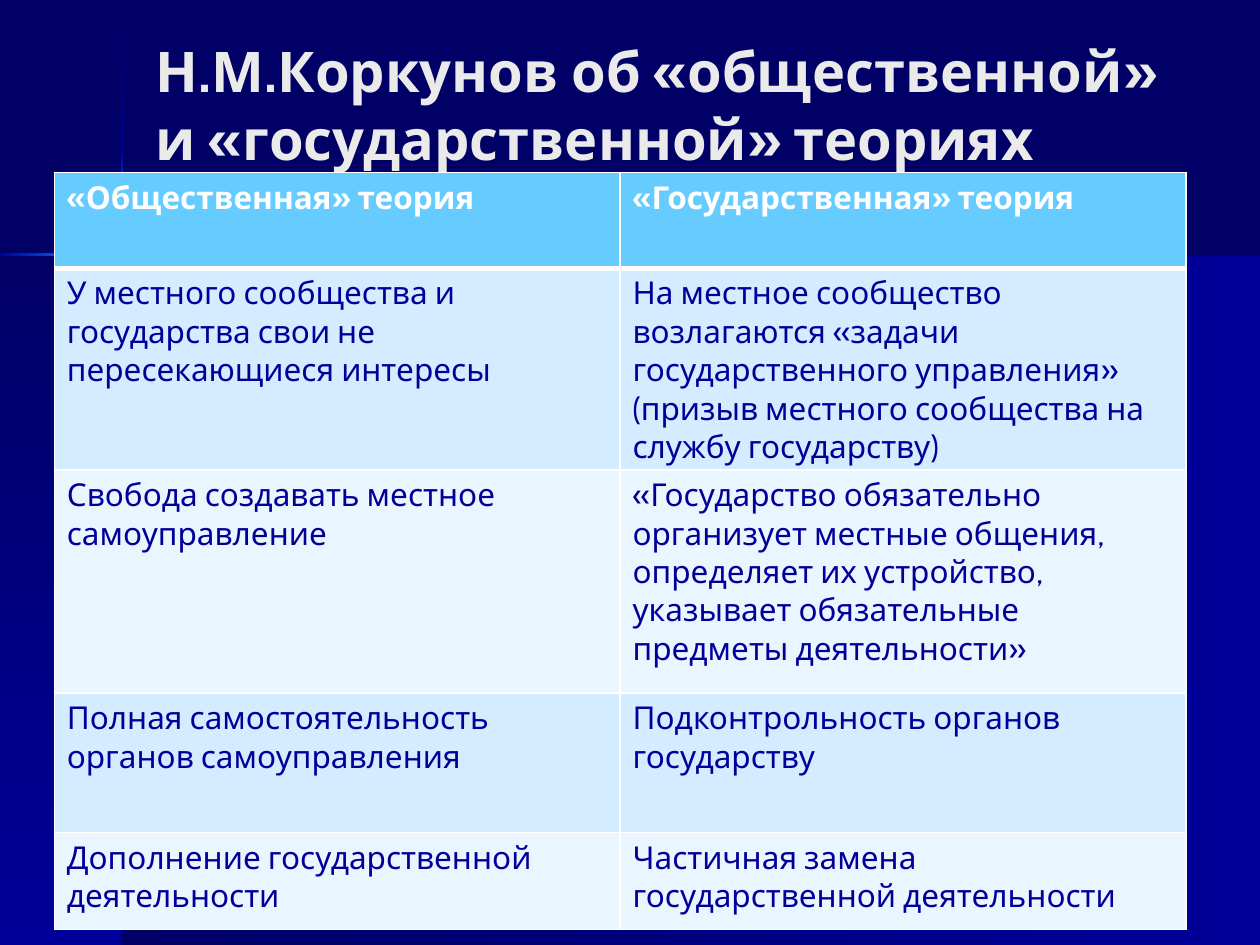
from dataclasses import dataclass
from itertools import pairwise

from lxml import etree
from pptx import Presentation
from pptx.dml.color import RGBColor
from pptx.enum import shapes, text
from pptx.oxml import ns
from pptx.util import Pt


@dataclass(frozen=True)
class Theme:
    font: str = "Cabin"
    title_size: int = 32
    cell_size: int = 18
    navy: str = "000066"
    blue: str = "000099"
    bright: str = "0066FF"
    glow: str = "FFFFCC"
    title: str = "EAEAEA"
    white: str = "FFFFFF"
    header: str = "66CCFF"
    bands: tuple = ("D3ECFF", "EAF6FF")


T = Theme()
RISE = (T.navy, T.blue)
FALL = (T.blue, T.navy)
BRIGHTEN = (T.blue, T.bright)
DIM = (T.bright, T.blue)
SHINE = (T.bright, T.glow, T.bright)

ROWS = [
    ("«Общественная» теория", "«Государственная» теория"),
    ("У местного сообщества и государства свои не пересекающиеся интересы",
     "На местное сообщество возлагаются «задачи государственного управления» "
     "(призыв местного сообщества на службу государству)"),
    ("Свобода создавать местное самоуправление",
     "«Государство обязательно организует местные общения, определяет их "
     "устройство, указывает обязательные предметы деятельности»"),
    ("Полная самостоятельность органов самоуправления",
     "Подконтрольность органов государству"),
    ("Дополнение государственной деятельности",
     "Частичная замена государственной деятельности"),
]
ROW_HEIGHTS = (54.7, 103.7, 127.4, 79.9, 55.4)


def child(parent, tag, **attrs):
    el = etree.SubElement(parent, ns.qn(tag))
    for name, value in attrs.items():
        el.set(name, str(value))
    return el


def add_panel(s, box, colors, angle):
    sp = s.shapes.add_shape(shapes.MSO_SHAPE.RECTANGLE, *map(Pt, box))
    sp.shadow.inherit = False
    sp.line.fill.background()
    sp.fill.gradient()
    grad = sp.fill._fill._gradFill
    for el in list(grad):
        grad.remove(el)
    stops = child(grad, "a:gsLst")
    for i, color in enumerate(colors):
        stop = child(stops, "a:gs", pos=i * 100000 // (len(colors) - 1))
        child(stop, "a:srgbClr", val=color)
    child(grad, "a:lin", ang=angle * 60000, scaled=0)


def add_background(s):
    s.background.fill.solid()
    s.background.fill.fore_color.rgb = RGBColor.from_string(T.navy)
    add_panel(s, (70, 145.5, 650, 394.5), RISE, 0)
    add_panel(s, (0, 145.5, 70, 394.5), RISE, 90)
    down = (0.7, 87.1, 118.8, 171.4, 203, 540)
    for (top, bottom), colors in zip(
            pairwise(down), (RISE, BRIGHTEN, SHINE, DIM, FALL)):
        add_panel(s, (69.1, top, 1.4, bottom - top), colors, 90)
    across = (0, 43.5, 95.8, 127.4, 720)
    for (left, right), colors in zip(
            pairwise(across), (BRIGHTEN, SHINE, DIM, FALL)):
        add_panel(s, (left, 144.7, right - left, 1.4), colors, 0)


def write(tf, content, size, color, bold):
    r = tf.paragraphs[0].add_run()
    r.text = content
    for name, value in dict(name=T.font, size=Pt(size), bold=bold).items():
        setattr(r.font, name, value)
    r.font.color.rgb = RGBColor.from_string(color)


def add_title(s):
    tf = s.shapes.add_textbox(Pt(82), Pt(2), Pt(594), Pt(115)).text_frame
    tf.word_wrap = True
    tf.vertical_anchor = text.MSO_ANCHOR.MIDDLE
    write(tf, "Н.М.Коркунов об «общественной» и «государственной» теориях",
          T.title_size, T.title, True)


def set_borders(cell, top, bottom):
    props = cell._tc.get_or_add_tcPr()
    for side, width in dict(L=1, R=1, T=top, B=bottom).items():
        line = child(props, f"a:ln{side}", w=Pt(width))
        child(child(line, "a:solidFill"), "a:srgbClr", val=T.white)


def add_theory_table(s):
    table = s.shapes.add_table(
        len(ROWS), 2, Pt(31), Pt(98.6), Pt(646.6), Pt(sum(ROW_HEIGHTS))).table
    for i, (row, height) in enumerate(zip(ROWS, ROW_HEIGHTS)):
        table.rows[i].height = Pt(height)
        is_header = i == 0
        fill = T.header if is_header else T.bands[(i - 1) % 2]
        for j, content in enumerate(row):
            cell = table.cell(i, j)
            set_borders(cell, 3 if i == 1 else 1, 3 if is_header else 1)
            cell.fill.solid()
            cell.fill.fore_color.rgb = RGBColor.from_string(fill)
            write(cell.text_frame, content, T.cell_size,
                  T.white if is_header else T.blue, is_header)


def main():
    prs = Presentation()
    prs.slide_width, prs.slide_height = Pt(720), Pt(540)
    s = prs.slides.add_slide(prs.slide_layouts[6])
    add_background(s)
    add_title(s)
    add_theory_table(s)
    prs.save("out.pptx")


if __name__ == "__main__":
    main()
